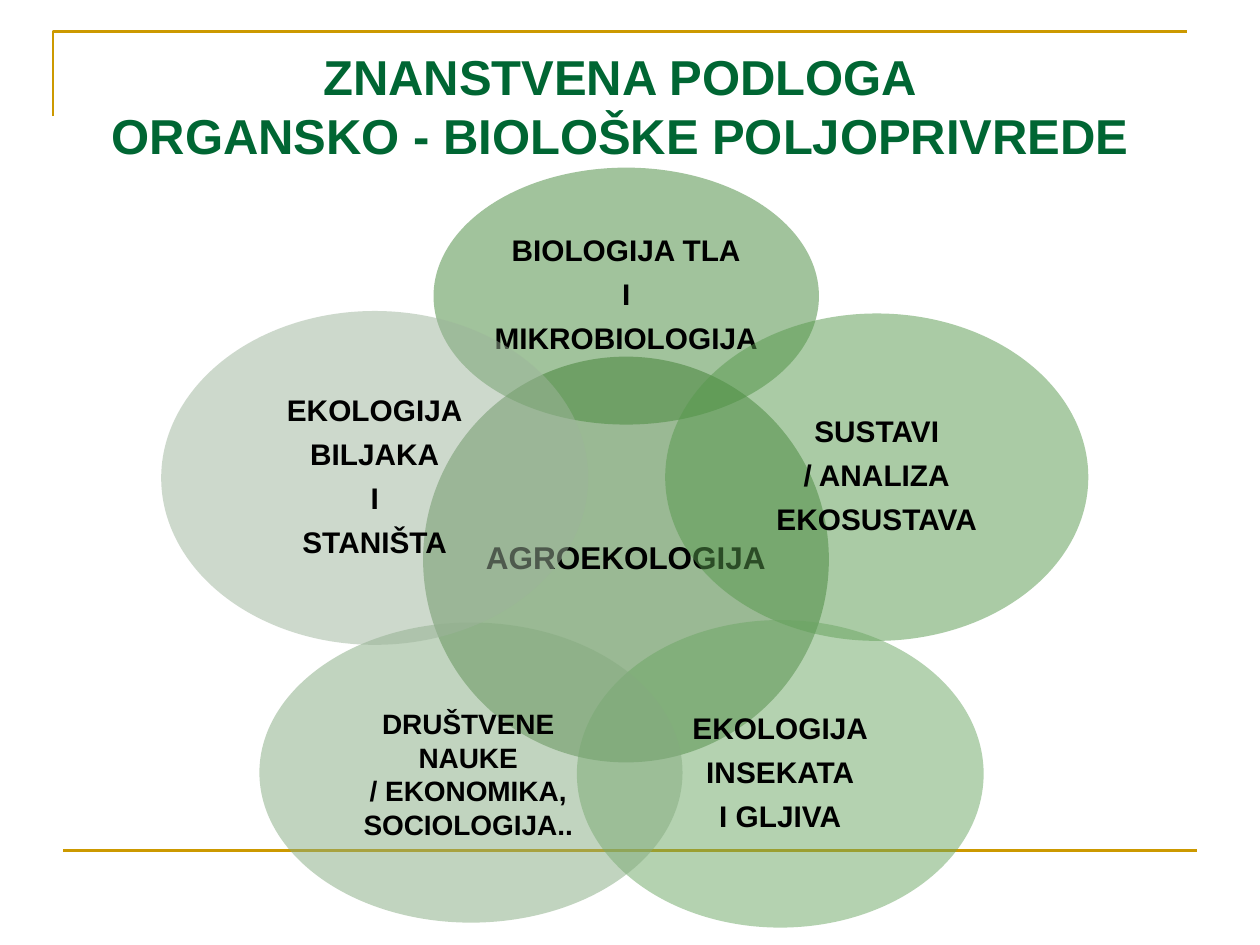
"""Build the slide on the scientific basis of organic-biological farming."""
import lxml.etree
import pptx
import pptx.dml.color
import pptx.enum.shapes
import pptx.enum.text
import pptx.oxml.ns
import pptx.util

Cm = pptx.util.Cm
Pt = pptx.util.Pt
CENTER = pptx.enum.text.PP_ALIGN.CENTER
MIDDLE = pptx.enum.text.MSO_ANCHOR.MIDDLE
qn = pptx.oxml.ns.qn


def rgb(value):
    return pptx.dml.color.RGBColor.from_string(value)


def write(frame, lines, size, color, frame_format, paragraph_format):
    for name, value in frame_format.items():
        setattr(frame, name, value)
    for index, line in enumerate(lines):
        paragraph = frame.paragraphs[0] if index == 0 else frame.add_paragraph()
        paragraph.text = line
        for name, value in paragraph_format.items():
            setattr(paragraph, name, value)
        for name, value in {"name": "Arial", "size": Pt(size), "bold": True}.items():
            setattr(paragraph.font, name, value)
        paragraph.font.color.rgb = rgb(color)


deck = pptx.Presentation()
deck.slide_width, deck.slide_height = Cm(25.4), Cm(19.05)
slide = deck.slides.add_slide(deck.slide_layouts[5])
shapes = slide.shapes

outline = shapes.build_freeform(Cm(1.07), Cm(2.34))
outline.add_line_segments([(Cm(1.07), Cm(0.63)), (Cm(23.93), Cm(0.63))], close=False)
corner = outline.convert_to_shape()
corner.fill.background()
corner.shadow.inherit = False

footer_rule = shapes.add_connector(
    pptx.enum.shapes.MSO_CONNECTOR.STRAIGHT, Cm(1.27), Cm(17.15), Cm(24.13), Cm(17.15))
lxml.etree.SubElement(footer_rule.element.spPr, qn("a:effectLst"))
for rule in (corner, footer_rule):
    rule.line.color.rgb = rgb("CC9900")
    rule.line.width = Pt(1.5)

title = shapes.title
for name, value in {"left": 1.07, "top": 0.76, "width": 22.86, "height": 2.74}.items():
    setattr(title, name, Cm(value))
write(title.text_frame, ["ZNANSTVENA PODLOGA\vORGANSKO - BIOLOŠKE POLJOPRIVREDE"], 28, "006633",
      {"auto_size": pptx.enum.text.MSO_AUTO_SIZE.NONE, "vertical_anchor": MIDDLE},
      {"alignment": CENTER})

petal_frame = {"word_wrap": True, "vertical_anchor": MIDDLE, "margin_left": 0,
               "margin_right": 0, "margin_top": 0, "margin_bottom": 0}
petal_paragraph = {"alignment": CENTER, "line_spacing": 0.9, "space_after": Pt(6.8)}
fields = [
    (8.53, 7.19, 8.18, 8.18, "36752B", 18, ["AGROEKOLOGIJA"]),
    (8.74, 3.38, 7.77, 5.18, "45883A", 17, ["BIOLOGIJA TLA", "I", "MIKROBIOLOGIJA"]),
    (13.41, 6.32, 8.53, 6.6, "56994C", 17, ["SUSTAVI", "/ ANALIZA", "EKOSUSTAVA"]),
    (11.63, 12.5, 8.2, 6.2, "6BA663", 17, ["EKOLOGIJA", "INSEKATA", "I GLJIVA"]),
    (5.23, 12.55, 8.53, 6.05, "85AB80", 17, []),
    (3.25, 6.27, 8.61, 6.73, "9DB49B", 17, ["EKOLOGIJA", "BILJAKA", "I", "STANIŠTA"]),
]
for left, top, width, height, color, size, lines in fields:
    petal = shapes.add_shape(pptx.enum.shapes.MSO_SHAPE.OVAL,
                             Cm(left), Cm(top), Cm(width), Cm(height))
    petal.shadow.inherit = False
    petal.line.fill.background()
    petal.fill.solid()
    petal.fill.fore_color.rgb = rgb(color)
    tint = petal.element.spPr.find(qn("a:solidFill")).find(qn("a:srgbClr"))
    lxml.etree.SubElement(tint, qn("a:alpha"), val="50000")
    write(petal.text_frame, lines, size, "000000", petal_frame, petal_paragraph)

social_sciences = shapes.add_textbox(Cm(7.04), Cm(14.12), Cm(4.8), Cm(3))
write(social_sciences.text_frame,
      ["DRUŠTVENE", "NAUKE", "/ EKONOMIKA,", "SOCIOLOGIJA.."], 16, "000000",
      {"word_wrap": False, "auto_size": pptx.enum.text.MSO_AUTO_SIZE.SHAPE_TO_FIT_TEXT},
      {"alignment": CENTER})

deck.save("out.pptx")
